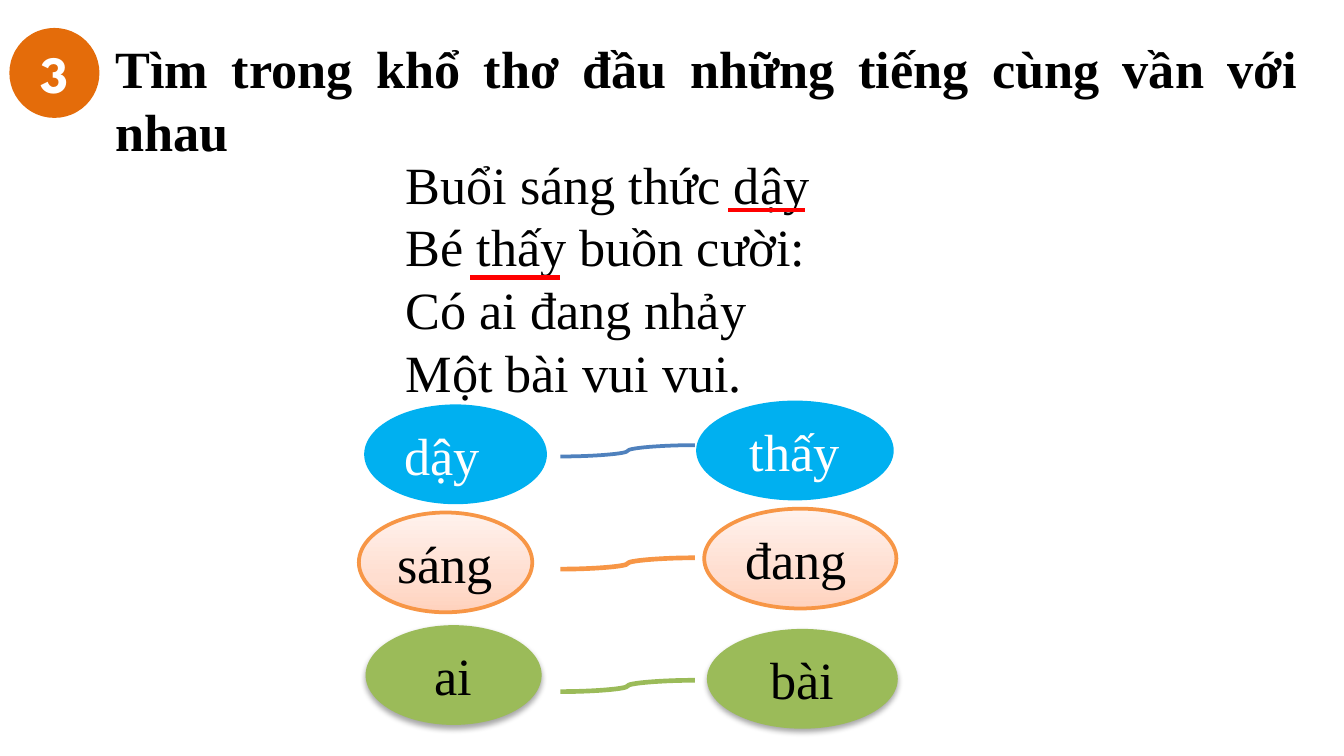
from lxml.etree import SubElement
from pptx import Presentation
from pptx.dml.color import RGBColor
from pptx.enum.shapes import MSO_CONNECTOR, MSO_SHAPE
from pptx.enum.text import MSO_ANCHOR, PP_ALIGN
from pptx.oxml import parse_xml
from pptx.oxml.ns import nsdecls, qn
from pptx.util import Inches, Pt

INK = {
    "black": "000000", "white": "FFFFFF", "red": "FF0000", "badge": "E46C0A",
    "sky": "00B0F0", "blue": "4F81BD", "orange": "F79646", "green": "9BBB59",
}
PEACH = ((0, "FFD2BD"), (35, "FFDED0"), (100, "FFF2ED"))
SERIF = "Times New Roman"
LEFT, MID = PP_ALIGN.JUSTIFY, PP_ALIGN.CENTER

deck = Presentation()
deck.slide_width, deck.slide_height = Inches(10), Inches(5.625)
slide = deck.slides.add_slide(deck.slide_layouts[6])
shapes = slide.shapes
col, row = deck.slide_width / 100, deck.slide_height / 100


def write(shape, lines, align, ink="black", face=SERIF, bold=False):
    frame = shape.text_frame
    frame.word_wrap = True
    frame.text = "\n".join(lines)
    for para in frame.paragraphs:
        para.alignment = align
        para.font.size, para.font.name, para.font.bold = Pt(28), face, bold
        para.font.color.rgb = RGBColor.from_string(INK[ink])


def link(kind, x1, y1, x2, y2, ink, width):
    line = shapes.add_connector(
        kind, int(x1 * col), int(y1 * row), int(x2 * col), int(y2 * row))
    line.line.color.rgb = RGBColor.from_string(INK[ink])
    line.line.width = Pt(width)
    SubElement(line._element.spPr, qn("a:effectLst"))


for x, y, w, h, lines, bold in (
    (7.6, 3.9, 89.9, 18.5, ["Tìm trong khổ thơ đầu những tiếng cùng vần với nhau"], True),
    (29.2, 19.2, 39.2, 35.2, ["Buổi sáng thức dậy", "Bé thấy buồn cười:",
                              "Có ai đang nhảy", "Một bài vui vui."], False),
):
    box = shapes.add_textbox(int(x * col), int(y * row), int(w * col), int(h * row))
    write(box, lines, LEFT, bold=bold)

for x, y, w, h, word, fill, ink, align in (
    (0.7, 3.7, 6.7, 11.9, "3", "badge", "white", MID),
    (27.1, 53.5, 13.6, 13.2, "dậy", "sky", "white", LEFT),
    (51.8, 53, 14.7, 13.2, "thấy", "sky", "white", MID),
    (26.7, 67.8, 12.9, 13.2, "sáng", "peach", "black", LEFT),
    (52.4, 67.3, 14.3, 13.2, "đang", "peach", "black", LEFT),
    (27.2, 82.7, 13.1, 13.2, "ai", "green", "black", MID),
    (52.6, 83.2, 14.2, 13.2, "bài", "green", "black", MID),
):
    oval = shapes.add_shape(
        MSO_SHAPE.OVAL, int(x * col), int(y * row), int(w * col), int(h * row))
    oval.shadow.inherit = False
    props = oval._element.spPr
    if fill == "peach":
        stops = "".join(
            f'<a:gs pos="{pos * 1000}"><a:srgbClr val="{tint}"/></a:gs>'
            for pos, tint in PEACH)
        props.find(qn("a:prstGeom")).addnext(parse_xml(
            f'<a:gradFill {nsdecls("a")} rotWithShape="1"><a:gsLst>{stops}</a:gsLst>'
            '<a:lin ang="16200000" scaled="0"/></a:gradFill>'))
        oval.line.color.rgb = RGBColor.from_string(INK["orange"])
        oval.line.width = Pt(2)
    else:
        oval.fill.solid()
        oval.fill.fore_color.rgb = RGBColor.from_string(INK[fill])
        oval.line.fill.background()
    if fill == "green":
        props.find(qn("a:effectLst")).append(parse_xml(
            f'<a:outerShdw {nsdecls("a")} blurRad="{Pt(3.1)}" dist="{Pt(1.8)}" '
            'dir="5400000" rotWithShape="0"><a:srgbClr val="000000">'
            '<a:alpha val="35000"/></a:srgbClr></a:outerShdw>'))
    oval.text_frame.vertical_anchor = MSO_ANCHOR.MIDDLE
    badge = fill == "badge"
    write(oval, [word], align, ink, "League Spartan" if badge else SERIF, badge)

for x1, x2, y in ((35, 41.7, 36.7), (54.2, 59.9, 27.8)):
    link(MSO_CONNECTOR.STRAIGHT, x1, y, x2, y, "red", 2.25)

for y, ink, width in ((60.4, "blue", 2), (75.3, "orange", 2.5), (91.5, "green", 2.5)):
    link(MSO_CONNECTOR.CURVE, 41.7, y, 51.7, y - 1.5, ink, width)

deck.save("out.pptx")
